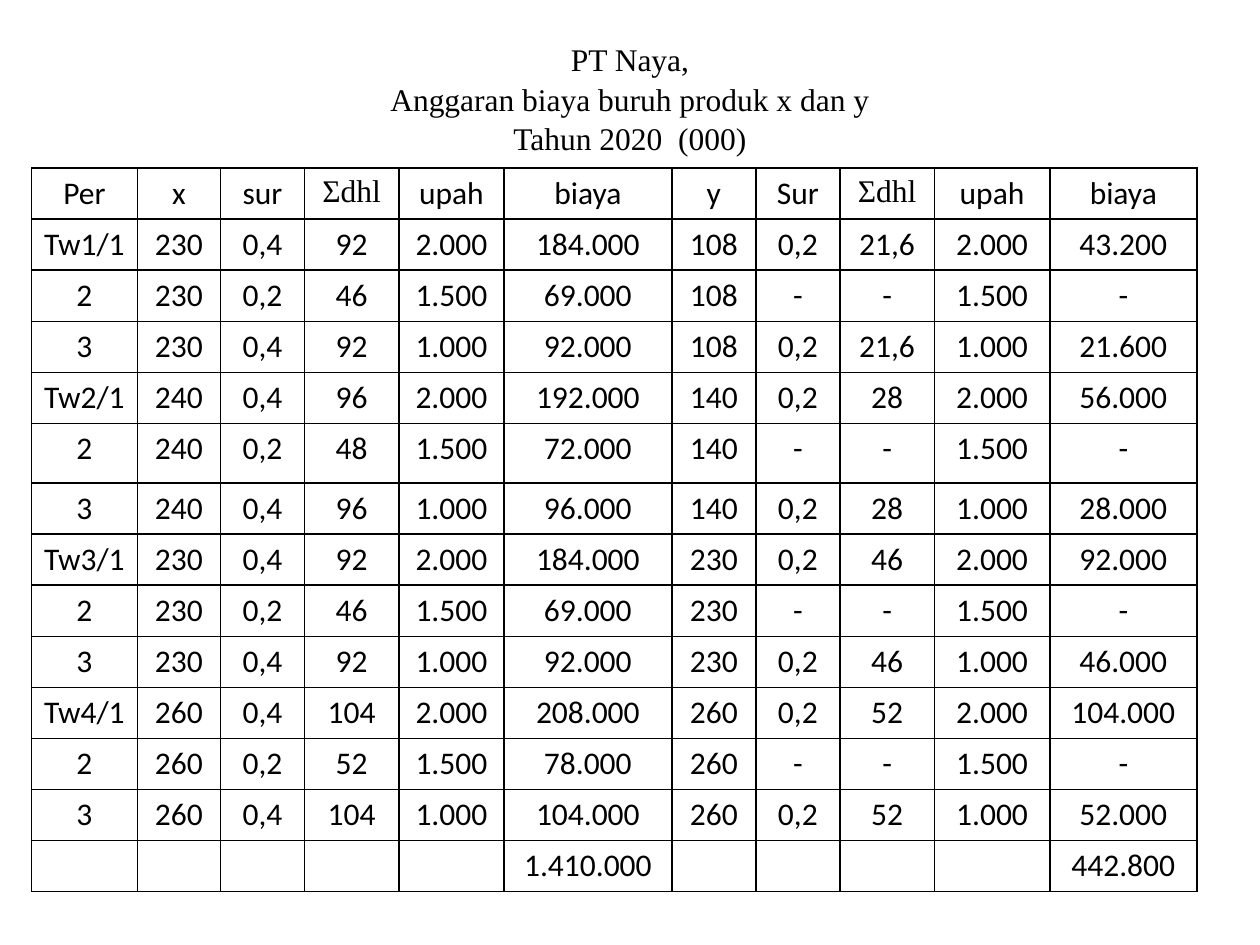
from dataclasses import dataclass

from lxml.etree import SubElement
from pptx import Presentation
from pptx.dml.color import RGBColor
from pptx.enum.text import MSO_ANCHOR, MSO_AUTO_SIZE, PP_ALIGN
from pptx.oxml.ns import qn
from pptx.slide import Slide
from pptx.table import _Cell
from pptx.text.text import TextFrame
from pptx.util import Pt

BLACK = RGBColor(0x00, 0x00, 0x00)
BODY_FONT = "Calibri"
SERIF_FONT = "Times New Roman"
TEXT_SIZE = Pt(18)

TITLE_LINES = ["PT Naya,", "Anggaran biaya buruh produk x dan y", "Tahun 2020  (000)"]
HOURS_HEADING = "Σdhl"
HEADINGS = ["Per", "x", "sur", HOURS_HEADING, "upah", "biaya",
            "y", "Sur", HOURS_HEADING, "upah", "biaya"]
TOTALS = ["", "", "", "", "", "1.410.000", "", "", "", "", "442.800"]

COLUMN_WIDTHS = [60.5, 47.5, 48, 54, 60, 96, 48, 48, 54, 66, 84]
ROW_HEIGHT = 29.2
TALL_ROW, TALL_ROW_HEIGHT = 5, 34


@dataclass(frozen=True)
class Quarter:
    units_x: int
    units_y: int


@dataclass(frozen=True)
class Month:
    """Standard hours are in tenths of an hour per unit."""
    tenths_x: int
    tenths_y: int
    wage: int


QUARTERS = [Quarter(230, 108), Quarter(240, 140), Quarter(230, 230), Quarter(260, 260)]
MONTHS = [Month(4, 2, 2000), Month(2, 0, 1500), Month(4, 2, 1000)]


def format_tenths(tenths: int) -> str:
    return f"{tenths / 10:g}".replace(".", ",") if tenths else "-"


def format_money(amount: int) -> str:
    return f"{amount:,}".replace(",", ".") if amount else "-"


def product_cells(units: int, tenths: int, wage: int) -> list[str]:
    """Units, standard rate, labour hours, wage and cost of one product."""
    hours = units * tenths
    return [str(units), format_tenths(tenths), format_tenths(hours),
            format_money(wage), format_money(hours * wage // 10)]


def budget_rows() -> list[list[str]]:
    rows = [HEADINGS]
    for quarter_number, quarter in enumerate(QUARTERS, 1):
        for month_number, month in enumerate(MONTHS, 1):
            period = f"Tw{quarter_number}/1" if month_number == 1 else str(month_number)
            rows.append([period]
                        + product_cells(quarter.units_x, month.tenths_x, month.wage)
                        + product_cells(quarter.units_y, month.tenths_y, month.wage))
    return rows + [TOTALS]


def format_text(frame: TextFrame, font_name: str) -> None:
    for paragraph in frame.paragraphs:
        paragraph.alignment = PP_ALIGN.CENTER
        for run in paragraph.runs:
            run.font.name = font_name
            run.font.size = TEXT_SIZE
            run.font.bold = False
            run.font.color.rgb = BLACK


def add_borders(cell: _Cell) -> None:
    properties = cell._tc.get_or_add_tcPr()
    for position, side in enumerate(("a:lnL", "a:lnR", "a:lnT", "a:lnB")):
        line = SubElement(properties, qn(side), w=str(Pt(1)))
        fill = SubElement(line, qn("a:solidFill"))
        SubElement(fill, qn("a:srgbClr"), val=str(BLACK))
        # Borders must come before the cell's fill.
        properties.insert(position, line)


def add_title(slide: Slide) -> None:
    title = slide.shapes.title
    title.left, title.top, title.width, title.height = Pt(36), Pt(21.6), Pt(648), Pt(68.4)
    frame = title.text_frame
    frame.text = "\n".join(TITLE_LINES)
    frame.auto_size = MSO_AUTO_SIZE.NONE
    frame.vertical_anchor = MSO_ANCHOR.MIDDLE
    format_text(frame, SERIF_FONT)
    for paragraph in frame.paragraphs:
        paragraph.line_spacing = 1.05


def add_budget_table(slide: Slide, rows: list[list[str]]) -> None:
    heights = [TALL_ROW_HEIGHT if index == TALL_ROW else ROW_HEIGHT
               for index in range(len(rows))]
    table = slide.shapes.add_table(len(rows), len(HEADINGS), Pt(18), Pt(96),
                                   Pt(sum(COLUMN_WIDTHS)), Pt(sum(heights))).table
    table.first_row = table.horz_banding = False
    for column, width in zip(table.columns, COLUMN_WIDTHS):
        column.width = Pt(width)
    for row, height, texts in zip(table.rows, heights, rows):
        row.height = Pt(height)
        for cell, text in zip(row.cells, texts):
            cell.text_frame.text = text
            cell.margin_left = cell.margin_right = Pt(5)
            cell.fill.background()
            add_borders(cell)
            format_text(cell.text_frame, SERIF_FONT if text == HOURS_HEADING else BODY_FONT)


def main() -> None:
    presentation = Presentation()
    presentation.slide_width, presentation.slide_height = Pt(720), Pt(540)
    slide = presentation.slides.add_slide(presentation.slide_layouts.get_by_name("Title Only"))
    add_title(slide)
    add_budget_table(slide, budget_rows())
    presentation.save("out.pptx")


if __name__ == "__main__":
    main()
